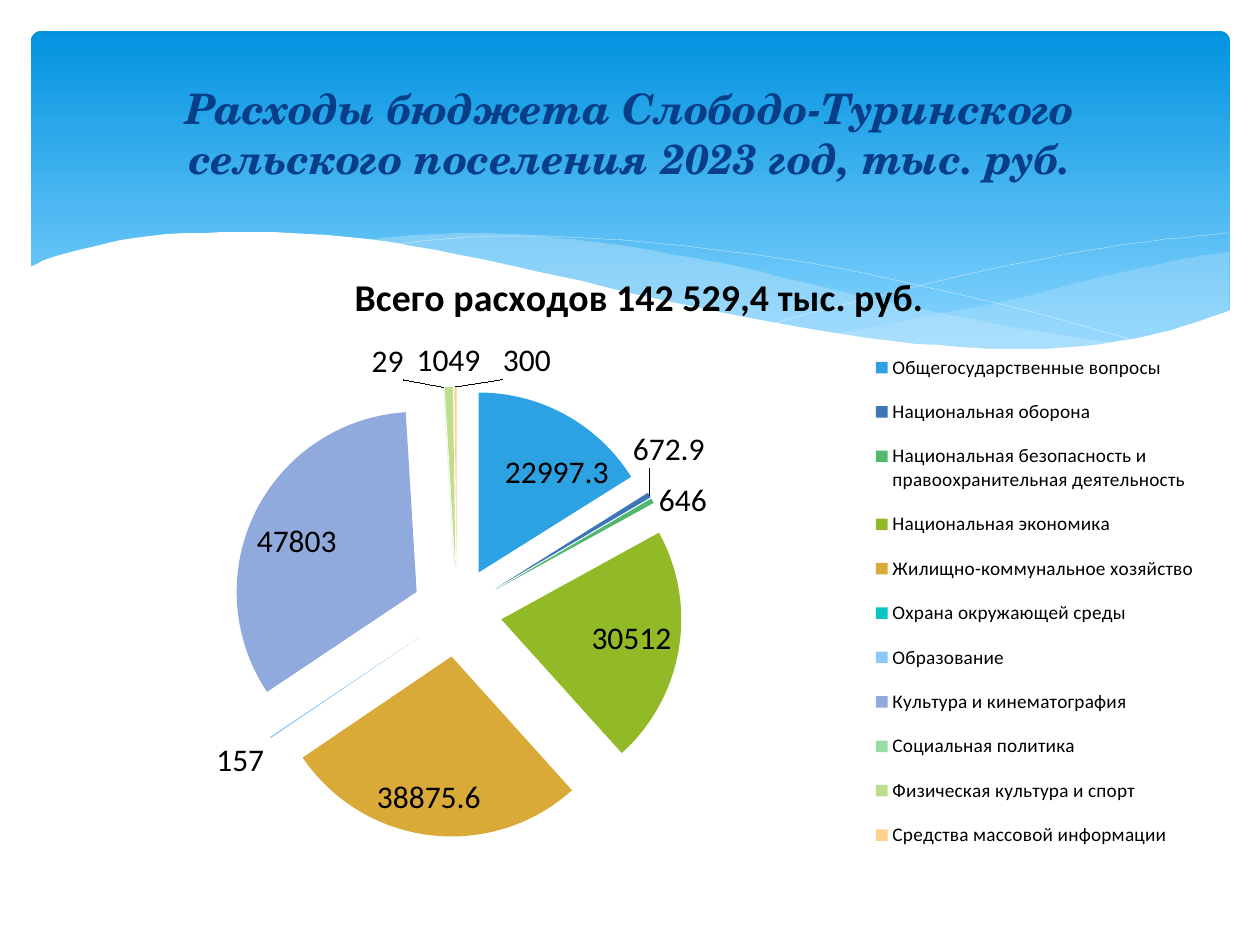
from dataclasses import dataclass

from lxml import etree
from pptx import Presentation
from pptx import util as u
from pptx.chart.data import CategoryChartData
from pptx.dml.color import RGBColor
from pptx.enum import chart as ch
from pptx.enum import shapes, text
from pptx.oxml.ns import qn

SCALE = 914400 / 126
Point = tuple[int, int]
Box = tuple[int, int, int, int]
CHART_BOX = (54, 244, 1171, 655)
PIE_BOX = (232, 387, 450, 450)
LEGEND_BOX = (855, 335, 360, 533)


@dataclass
class Wave:
    """A banner curve: smooth edges joined by corners, filled or outlined."""
    edges: list[list[Point]]
    color: str
    opacity: int = 100
    filled: bool = True


@dataclass
class Expense:
    """One budget heading with its amount and slice colour."""
    heading: str
    amount: float | None
    color: str


WAVES = [
    Wave([[(1229, 252), (1194, 257), (1142, 268), (1085, 281), (1014, 299),
           (949, 312), (890, 324), (833, 334)],
          [(833, 334), (888, 341), (939, 346), (998, 349), (1051, 349), (1099, 345),
           (1140, 339), (1178, 330), (1213, 318), (1229, 311)]], "C6E7FC", 29),
    Wave([[(1125, 344), (1055, 334), (977, 320), (890, 302), (793, 280), (736, 266),
           (682, 256), (632, 247), (586, 241), (529, 235), (479, 233), (433, 234),
           (394, 237), (360, 241)],
          [(360, 241), (431, 251), (509, 266), (566, 280), (668, 302), (757, 321),
           (838, 335), (911, 345), (973, 349), (1031, 350), (1080, 349), (1125, 344)]],
         "C6E7FC", 40),
    Wave([[(389, 246), (413, 242), (457, 238), (505, 236), (567, 237), (643, 242),
           (733, 252), (838, 268), (958, 294), (1047, 316), (1143, 343)]],
         "FFFFFF", filled=False),
    Wave([[(772, 324), (823, 310), (907, 289), (978, 272), (1053, 257), (1128, 244),
           (1198, 236), (1229, 233)]], "FFFFFF", filled=False),
    Wave([[(1231, 310), (1184, 326), (1133, 339), (1071, 347), (1019, 349), (959, 347),
           (867, 338), (760, 320), (634, 294), (563, 277), (460, 255), (368, 239),
           (290, 233), (223, 232), (150, 236), (96, 246), (50, 258), (29, 268)],
          [(29, 415), (1231, 415)]], "FFFFFF"),
]

EXPENSES = [
    Expense("Общегосударственные вопросы", 22997.3, "2DA2E2"),
    Expense("Национальная оборона", 672.9, "3E75B9"),
    Expense("Национальная безопасность и правоохранительная деятельность", 646, "51B86E"),
    Expense("Национальная экономика", 30512, "92B926"),
    Expense("Жилищно-коммунальное хозяйство", 38875.6, "DAAA39"),
    Expense("Охрана окружающей среды", None, "06C6C2"),
    Expense("Образование", 157, "8CC8FB"),
    Expense("Культура и кинематография", 47803, "91AADE"),
    Expense("Социальная политика", 29, "98DDA5"),
    Expense("Физическая культура и спорт", 1049, "BFDE8B"),
    Expense("Средства массовой информации", 300, "FCD28E"),
]


def px(length: float) -> int:
    """Turn px into EMU."""
    return round(length * SCALE)


def rgb(color: str) -> RGBColor:
    """Turn a hex string into a colour."""
    return RGBColor.from_string(color)


def format_font(font, size: float, color: str = "000000", name: str = "Calibri",
                bold: bool = False, italic: bool = False) -> None:
    """Set every used property of a font."""
    font.size, font.name, font.bold, font.italic = u.Pt(size), name, bold, italic
    font.color.rgb = rgb(color)


def write(frame, words: str, **style) -> None:
    """Write one centred paragraph in the given format."""
    paragraph = frame.paragraphs[0]
    paragraph.alignment = text.PP_ALIGN.CENTER
    run = paragraph.add_run()
    run.text = words
    format_font(run.font, **style)


def smooth(knots: list[Point], steps: int = 4) -> list[tuple[float, float]]:
    """Run a Catmull-Rom curve through the knots."""
    if len(knots) < 3:
        return knots
    padded = [knots[0], *knots, knots[-1]]
    curve = [knots[0]]
    for a, b, c, d in zip(padded, padded[1:], padded[2:], padded[3:]):
        for t in (step / steps for step in range(1, steps + 1)):
            curve.append(tuple(
                (2 * q + (r - p) * t + (2 * p - 5 * q + 4 * r - s) * t ** 2
                 + (3 * q - p - 3 * r + s) * t ** 3) / 2
                for p, q, r, s in zip(a, b, c, d)))
    return curve


def draw_wave(slide, wave: Wave) -> None:
    """Draw one curve of the banner."""
    start, *rest = [point for edge in wave.edges for point in smooth(edge)]
    builder = slide.shapes.build_freeform(*start, scale=SCALE)
    builder.add_line_segments(rest, close=wave.filled)
    shape = builder.convert_to_shape()
    shape.shadow.inherit = False
    if not wave.filled:
        shape.fill.background()
        shape.line.color.rgb = rgb(wave.color)
        shape.line.width = u.Pt(0.1)
        return
    shape.line.fill.background()
    shape.fill.solid()
    shape.fill.fore_color.rgb = rgb(wave.color)
    if wave.opacity < 100:
        tone = next(shape.element.spPr.iter(qn("a:srgbClr")))
        etree.SubElement(tone, qn("a:alpha"), val=str(wave.opacity * 1000))


def draw_banner(slide) -> None:
    """Draw the blue gradient banner and its waves."""
    banner = slide.shapes.add_shape(
        shapes.MSO_SHAPE.ROUNDED_RECTANGLE, px(31), px(31), px(1199), px(340))
    banner.adjustments[0] = 0.03
    banner.shadow.inherit = False
    banner.line.fill.background()
    banner.fill.gradient()
    banner.fill.gradient_angle = 270
    for stop, position, color in zip(banner.fill.gradient_stops, (0, 0.9), ("0293E0", "83D3FE")):
        stop.position, stop.color.rgb = position, rgb(color)
    for wave in WAVES:
        draw_wave(slide, wave)


def place(part, box: Box, before: str, inner: bool = False) -> None:
    """Give a chart part a fixed place, from a box in slide px."""
    for old in part.findall(qn("c:layout")):
        part.remove(old)
    layout = etree.Element(qn("c:layout"))
    manual = etree.SubElement(layout, qn("c:manualLayout"))
    if inner:
        etree.SubElement(manual, qn("c:layoutTarget"), val="inner")
    for mode in ("xMode", "yMode"):
        etree.SubElement(manual, qn(f"c:{mode}"), val="edge")
    left, top, width, height = CHART_BOX
    shares = ((box[0] - left) / width, (box[1] - top) / height, box[2] / width, box[3] / height)
    for side, share in zip("xywh", shares):
        etree.SubElement(manual, qn(f"c:{side}"), val=f"{share:.4f}")
    part.find(qn(before)).addprevious(layout)


def draw_expenses(slide) -> None:
    """Draw the exploded pie of expenses."""
    data = CategoryChartData()
    data.categories = [expense.heading for expense in EXPENSES]
    data.add_series("Series 1", [expense.amount for expense in EXPENSES])
    pie = slide.shapes.add_chart(ch.XL_CHART_TYPE.PIE, *map(px, CHART_BOX), data).chart
    format_font(pie.font, 18)
    pie.has_title = True
    write(pie.chart_title.text_frame, "Всего расходов 142 529,4 тыс. руб.", size=21.6, bold=True)
    pie.has_legend = True
    pie.legend.position = ch.XL_LEGEND_POSITION.RIGHT
    pie.legend.include_in_layout = False
    format_font(pie.legend.font, 11)
    place(pie.legend._element, LEGEND_BOX, "c:overlay")
    plot = pie.plots[0]
    place(plot._element.getparent(), PIE_BOX, "c:pieChart", inner=True)

    plot.vary_by_categories = True
    series = plot.series[0]
    explosion = etree.Element(qn("c:explosion"), val="25")
    series._element.find(qn("c:tx")).addnext(explosion)
    for index, expense in enumerate(EXPENSES):
        fill = series.points[index].format.fill
        fill.solid()
        fill.fore_color.rgb = rgb(expense.color)
    labels = series.data_labels
    labels.show_value = True
    labels.position = ch.XL_LABEL_POSITION.BEST_FIT
    format_font(labels.font, 18)


def draw_title(slide) -> None:
    """Write the slide title."""
    frame = slide.shapes.add_textbox(px(63), px(46), px(1134), px(173)).text_frame
    frame.word_wrap = True
    frame.vertical_anchor = text.MSO_ANCHOR.MIDDLE
    write(frame, "Расходы бюджета Слободо-Туринского сельского поселения 2023 год, тыс. руб.",
          size=24, color="073E87", name="TeX Gyre Schola", bold=True, italic=True)


def main() -> None:
    """Build and save the slide."""
    deck = Presentation()
    deck.slide_width, deck.slide_height = px(1260), px(945)
    slide = deck.slides.add_slide(deck.slide_layouts[6])
    draw_banner(slide)
    draw_expenses(slide)
    draw_title(slide)
    deck.save("out.pptx")


if __name__ == "__main__":
    main()
